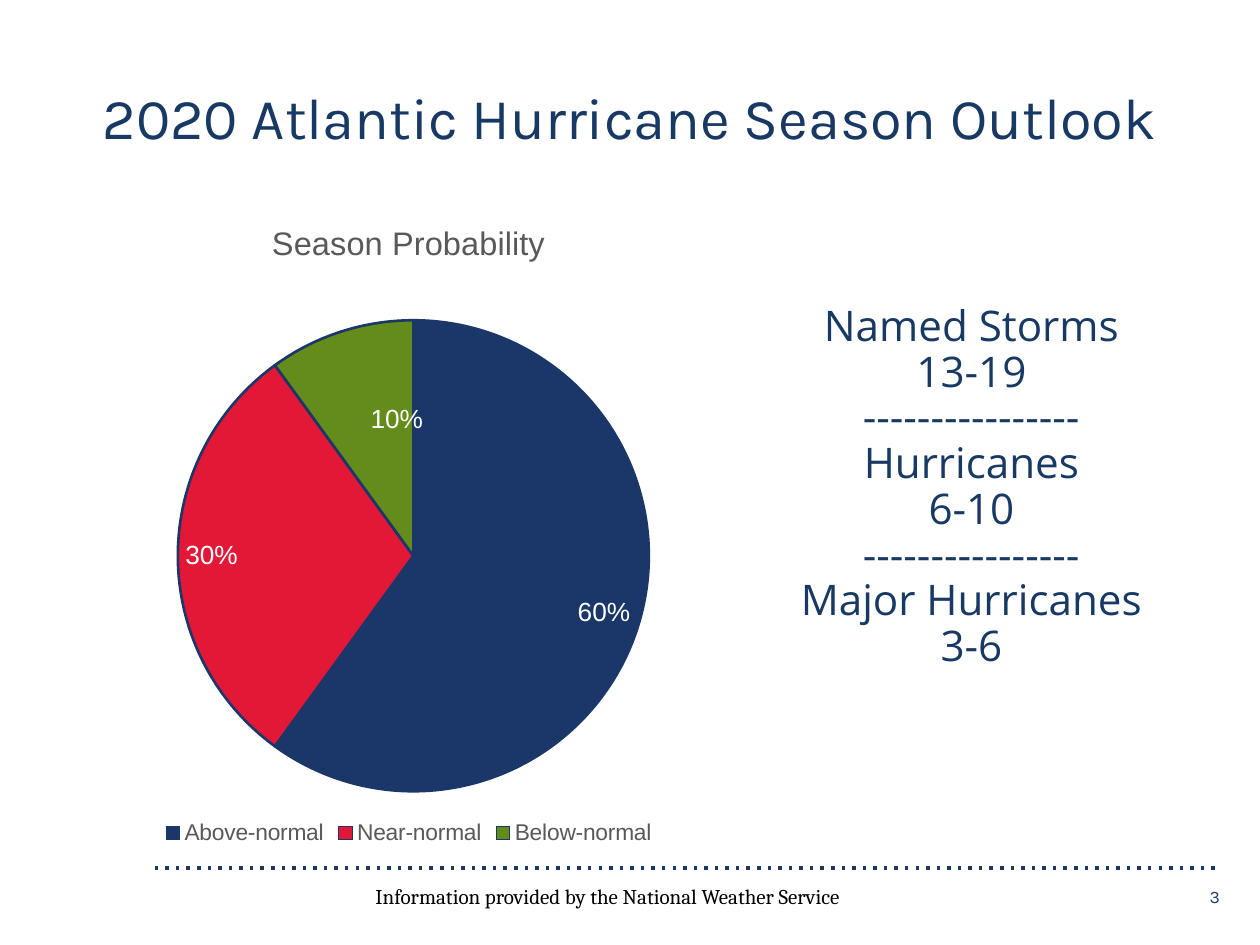
from lxml.etree import SubElement
from pptx import Presentation
from pptx.chart.data import CategoryChartData
from pptx.dml.color import RGBColor
from pptx.enum.chart import XL_CHART_TYPE, XL_LABEL_POSITION, XL_LEGEND_POSITION
from pptx.enum.shapes import MSO_CONNECTOR
from pptx.enum.text import MSO_ANCHOR, PP_ALIGN
from pptx.oxml import parse_xml
from pptx.oxml.ns import nsdecls, qn
from pptx.util import Cm, Pt

NAVY, GREY, WHITE, BLACK = "173963", "595959", "FFFFFF", "000000"
TITLE = "2020 Atlantic Hurricane Season Outlook"
CHART_TITLE = "Season Probability"
SEASONS = [
    ("Above-normal", 0.6, "1B3668"),
    ("Near-normal", 0.3, "E31837"),
    ("Below-normal", 0.1, "648C1A"),
]
FORECAST = [("Named Storms", "13-19"), ("Hurricanes", "6-10"), ("Major Hurricanes", "3-6")]
DIVIDER = "-" * 16
SOURCE = "Information provided by the National Weather Service"


def rgb(value):
    return RGBColor.from_string(value)


def style(font, size, name, color):
    font.size, font.name = Pt(size), name
    font.color.rgb = rgb(color)


def place(shape, left, top, width, height):
    shape.left, shape.top, shape.width, shape.height = map(Cm, (left, top, width, height))


def setup(shape, inset, anchor, wrap=True):
    tf = shape.text_frame
    tf.word_wrap, tf.vertical_anchor = wrap, anchor
    tf.margin_left = tf.margin_right = tf.margin_top = tf.margin_bottom = Cm(inset)
    return tf


def write(p, text, size, name, color, align):
    p.alignment = align
    r = p.add_run()
    r.text = text
    style(r.font, size, name, color)


def manual_layout(**values):
    items = "".join(f'<c:{tag} val="{value}"/>' for tag, value in values.items())
    return parse_xml(f'<c:layout {nsdecls("c")}><c:manualLayout>{items}</c:manualLayout></c:layout>')


def add_pie(s):
    data = CategoryChartData(number_format="0%")
    data.categories = [name for name, _, _ in SEASONS]
    data.add_series(CHART_TITLE, [value for _, value, _ in SEASONS])
    chart = s.shapes.add_chart(
        XL_CHART_TYPE.PIE, Cm(-1.07), Cm(3.94), Cm(18.62), Cm(13.21), data
    ).chart
    style(chart.font, 10, "Arial", BLACK)

    chart.has_title = True
    r = chart.chart_title.text_frame.paragraphs[0].add_run()
    r.text = CHART_TITLE
    style(r.font, 18.6, "Arial", GREY)
    r.font.bold = False
    chart.chart_title.include_in_layout = False

    chart.has_legend = True
    chart.legend.position = XL_LEGEND_POSITION.BOTTOM
    chart.legend.include_in_layout = False
    style(chart.legend.font, 13, "Arial", GREY)

    plot = chart.plots[0]
    plot.vary_by_categories = True
    series = plot.series[0]
    for i, (_, _, color) in enumerate(SEASONS):
        point = series.points[i]
        point.format.fill.solid()
        point.format.fill.fore_color.rgb = rgb(color)
        point.format.line.color.rgb = rgb(SEASONS[0][2])
        point.format.line.width = Pt(1.5)
        style(point.data_label.font, 15, "Arial", WHITE)
        point.data_label.position = XL_LABEL_POSITION.INSIDE_END

    last_label = series.data_labels._element.findall(qn("c:dLbl"))[-1]
    last_label.insert(1, manual_layout(x=0.03, y=0.1))

    area = chart._chartSpace.chart.plotArea
    for layout in area.findall(qn("c:layout")):
        area.remove(layout)
    area.insert(0, manual_layout(layoutTarget="inner", xMode="edge", yMode="edge",
                                 x=0.25, y=0.19, w=0.51, h=0.72))


def add_forecast(body):
    place(body, 15.04, 6.1, 9.09, 8.86)
    tf = setup(body, 0.13, MSO_ANCHOR.TOP)
    lines = list(FORECAST[0])
    for pair in FORECAST[1:]:
        lines += [DIVIDER, *pair]
    for i, text in enumerate(lines):
        p = tf.add_paragraph() if i else tf.paragraphs[0]
        pPr = p._p.get_or_add_pPr()
        pPr.set("marL", "0")
        pPr.set("indent", "0")
        SubElement(pPr, qn("a:buNone"))
        p.line_spacing = 0.8
        p.space_before = Pt(3 if i else 0)
        write(p, text, 24.1, "Open Sans", NAVY, PP_ALIGN.CENTER)


def add_footer(s):
    rule = s.shapes.add_connector(MSO_CONNECTOR.STRAIGHT, Cm(3.12), Cm(17.5), Cm(24.61), Cm(17.5))
    rule.line.color.rgb = rgb(NAVY)
    rule.line.width = Pt(2)
    dash = SubElement(rule.line._get_or_add_ln(), qn("a:custDash"))
    SubElement(dash, qn("a:ds"), d="100000", sp="200000")
    SubElement(rule._element.spPr, qn("a:effectLst"))

    source = s.shapes.add_textbox(Cm(7.44), Cm(17.68), Cm(10.52), Cm(0.76))
    tf = setup(source, 0.13, MSO_ANCHOR.TOP, wrap=False)
    write(tf.paragraphs[0], SOURCE, 12, "Cambria", BLACK, PP_ALIGN.LEFT)

    number = s.shapes.add_textbox(Cm(24.23), Cm(17.83), Cm(0.36), Cm(0.46))
    tf = setup(number, 0, MSO_ANCHOR.BOTTOM, wrap=False)
    write(tf.paragraphs[0], "3", 10, "Karla", NAVY, PP_ALIGN.RIGHT)


def main():
    prs = Presentation()
    prs.slide_width, prs.slide_height = Cm(25.4), Cm(19.05)
    s = prs.slides.add_slide(prs.slide_layouts[1])
    s.background.fill.solid()
    s.background.fill.fore_color.rgb = rgb(WHITE)

    title = s.shapes.title
    place(title, 1.27, 0.76, 22.86, 3.18)
    tf = setup(title, 0.13, MSO_ANCHOR.MIDDLE)
    write(tf.paragraphs[0], TITLE, 33, "Karla", NAVY, PP_ALIGN.CENTER)

    add_forecast(s.placeholders[1])
    add_pie(s)
    add_footer(s)
    prs.save("out.pptx")


if __name__ == "__main__":
    main()
